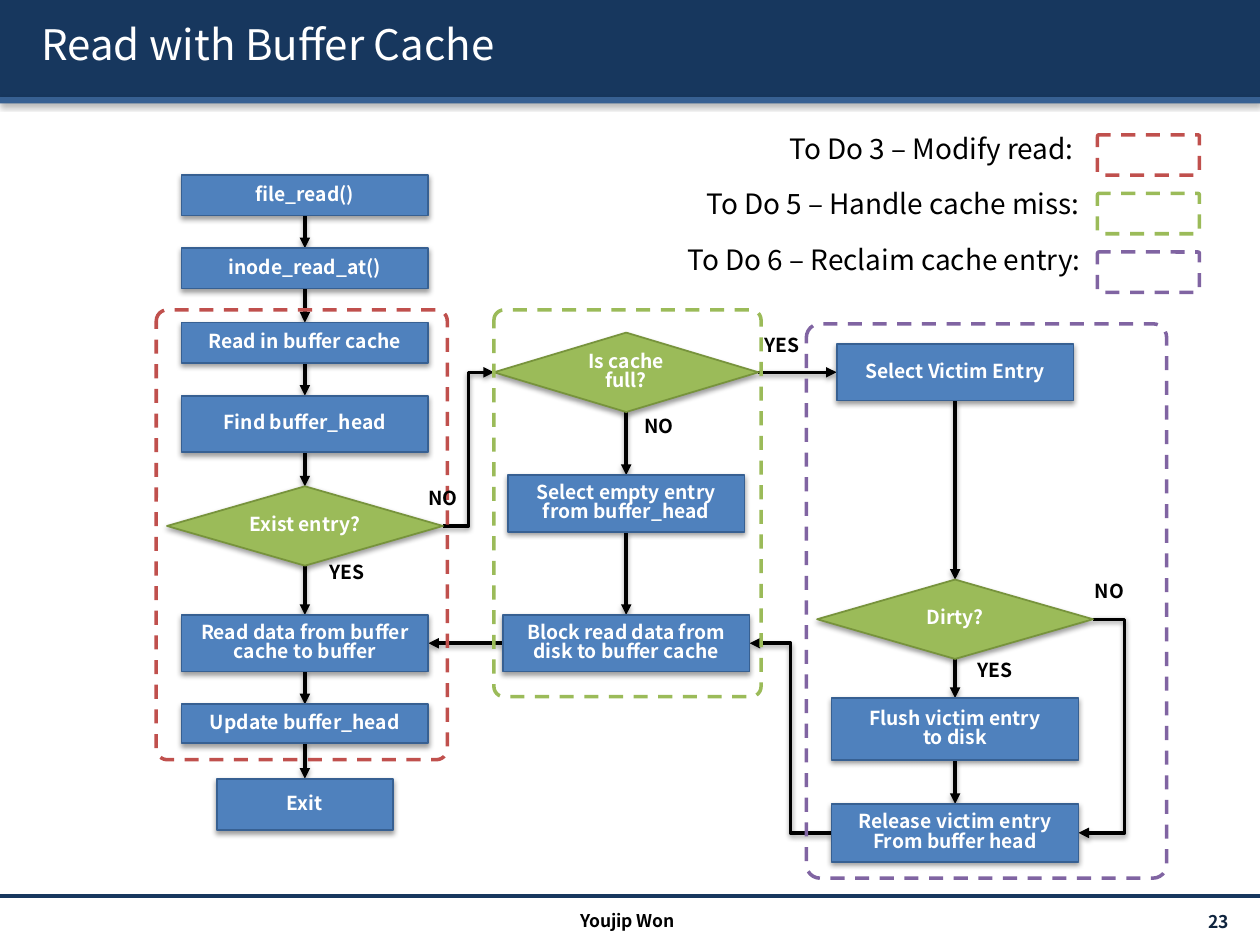
from dataclasses import dataclass
from itertools import pairwise

from lxml.etree import SubElement
from pptx import Presentation
from pptx.dml.color import RGBColor
from pptx.enum.dml import MSO_LINE
from pptx.enum.shapes import MSO_CONNECTOR, MSO_SHAPE
from pptx.enum.text import MSO_ANCHOR, PP_ALIGN
from pptx.oxml.ns import qn
from pptx.util import Inches, Pt

FONT = "Noto Sans CJK KR"
NAVY = RGBColor(0x17, 0x37, 0x5E)
DARK_NAVY = RGBColor(0x0F, 0x24, 0x3E)
STEEL = RGBColor(0x37, 0x60, 0x92)
BLUE = RGBColor(0x4F, 0x81, 0xBD)
GREEN = RGBColor(0x9B, 0xBB, 0x59)
DARK_GREEN = RGBColor(0x77, 0x93, 0x3C)
RED = RGBColor(0xC0, 0x50, 0x4D)
PURPLE = RGBColor(0x80, 0x64, 0xA2)
BLACK = RGBColor(0, 0, 0)
WHITE = RGBColor(0xFF, 0xFF, 0xFF)


@dataclass(frozen=True)
class Node:
    text: str
    center: float
    top: float
    height: float = 0.45
    width: float = 1.96
    decision: bool = False

    @property
    def left(self) -> float:
        return self.center - self.width / 2

    @property
    def right(self) -> float:
        return self.center + self.width / 2

    @property
    def middle(self) -> float:
        return self.top + self.height / 2

    @property
    def bottom(self) -> float:
        return self.top + self.height


@dataclass(frozen=True)
class Label:
    text: str
    left: float
    top: float
    width: float = 0.59
    height: float = 0.32
    size: int = 11
    bold: bool = True
    color: RGBColor = BLACK
    align: PP_ALIGN = PP_ALIGN.CENTER
    anchor: MSO_ANCHOR = MSO_ANCHOR.TOP


@dataclass(frozen=True)
class Task:
    text: str
    text_left: float
    color: RGBColor
    frame: tuple[float, float, float, float]


LEFT, CENTER, RIGHT = 2.42, 4.97, 7.58
EXISTS = Node("Exist entry?", LEFT, 3.86, 0.63, 2.19, True)
READ_DATA = Node("Read data from buffer cache to buffer", LEFT, 4.88)
FULL = Node("Is cache full?", CENTER, 2.64, 0.63, 2.1, True)
BLOCK_READ = Node("Block read data from disk to buffer cache", CENTER, 4.88)
VICTIM = Node("Select Victim Entry", RIGHT, 2.73, width=1.88)
DIRTY = Node("Dirty?", RIGHT, 4.6, 0.63, 2.19, True)
RELEASE = Node("Release victim entry\nFrom buffer head", RIGHT, 6.38, 0.46)
COLUMNS = (
    (
        Node("file_read()", LEFT, 1.39, 0.32),
        Node("inode_read_at()", LEFT, 1.97, 0.32),
        Node("Read in buffer cache", LEFT, 2.56, 0.32),
        Node("Find buffer_head", LEFT, 3.14),
        EXISTS,
        READ_DATA,
        Node("Update buffer_head", LEFT, 5.59, 0.31),
        Node("Exit", LEFT, 6.18, 0.41, 1.4),
    ),
    (FULL, Node("Select empty entry from buffer_head", CENTER, 3.77, width=1.88), BLOCK_READ),
    (VICTIM, DIRTY, Node("Flush victim entry\nto disk", RIGHT, 5.54, 0.49), RELEASE),
)
TASKS = (
    Task("To Do 3 – Modify read:", 6.17, RED, (1.24, 2.46, 2.31, 3.57)),
    Task("To Do 5 – Handle cache miss:", 5.51, GREEN, (3.92, 2.46, 2.12, 3.07)),
    Task("To Do 6 – Reclaim cache entry:", 5.36, PURPLE, (6.4, 2.57, 2.86, 4.4)),
)
LABELS = (
    Label("YES", 2.46, 4.43),
    Label("NO", 3.3, 3.84, 0.53, align=PP_ALIGN.LEFT),
    Label("NO", 4.95, 3.27, 0.56),
    Label("YES", 5.93, 2.63, 0.56),
    Label("YES", 7.6, 5.21),
    Label("NO", 8.51, 4.58),
    Label("Youjip Won", 3.32, 7.2, 3.32, 0.24, 10),
    Label("23", 8.71, 7.21, 1.14, 0.24, 10, True, DARK_NAVY, PP_ALIGN.RIGHT, MSO_ANCHOR.MIDDLE),
)


def add_shadow(effects, blur: float = 3.1, distance: float = 1.6, opacity: int = 38) -> None:
    """Fill an effect list with a soft black shadow falling straight down."""
    shadow = SubElement(effects, qn("a:outerShdw"), blurRad=str(Pt(blur)),
                        dist=str(Pt(distance)), dir="5400000", rotWithShape="0")
    color = SubElement(shadow, qn("a:srgbClr"), val="000000")
    SubElement(color, qn("a:alpha"), val=str(opacity * 1000))


def write_text(shape, text: str, size: int, color: RGBColor, bold: bool,
               align: PP_ALIGN, anchor: MSO_ANCHOR) -> None:
    """Put formatted text into a shape."""
    frame = shape.text_frame
    frame.text = text
    frame.word_wrap = True
    frame.vertical_anchor = anchor
    for para in frame.paragraphs:
        para.alignment = align
        para.line_spacing = 0.83
        for span in para.runs:
            span.font.name = FONT
            span.font.size = Pt(size)
            span.font.bold = bold
            span.font.color.rgb = color
            SubElement(span.font._element, qn("a:ea"), typeface=FONT)


def add_label(page, label: Label):
    """Add a text box and return it."""
    box = page.shapes.add_textbox(*map(Inches, (label.left, label.top, label.width, label.height)))
    write_text(box, label.text, label.size, label.color, label.bold, label.align, label.anchor)
    return box


def add_block(page, kind: MSO_SHAPE, place: tuple[float, ...], fill: RGBColor,
              line: RGBColor | None = None):
    """Add a filled shape with a shadow and return it."""
    shape = page.shapes.add_shape(kind, *map(Inches, place))
    shape.fill.solid()
    shape.fill.fore_color.rgb = fill
    if line is None:
        shape.line.fill.background()
    else:
        shape.line.color.rgb = line
        shape.line.width = Pt(1)
    shape.shadow.inherit = False
    add_shadow(shape.element.spPr.find(qn("a:effectLst")))
    return shape


def add_node(page, node: Node) -> None:
    """Draw one step or decision of the flow."""
    kind, fill, line = ((MSO_SHAPE.DIAMOND, GREEN, DARK_GREEN) if node.decision
                        else (MSO_SHAPE.RECTANGLE, BLUE, STEEL))
    shape = add_block(page, kind, (node.left, node.top, node.width, node.height), fill, line)
    write_text(shape, node.text, 11, WHITE, True, PP_ALIGN.CENTER, MSO_ANCHOR.MIDDLE)


def add_line(page, start: tuple[float, float], end: tuple[float, float], color: RGBColor = BLACK,
             arrow: bool = True, bend: float | None = None) -> None:
    """Draw a straight line, or an elbow whose bend is a share of its width."""
    kind = MSO_CONNECTOR.STRAIGHT if bend is None else MSO_CONNECTOR.ELBOW
    line = page.shapes.add_connector(kind, *map(Inches, (*start, *end)))
    line.line.color.rgb = color
    line.line.width = Pt(2)
    properties = line.element.spPr
    if bend is not None:
        guides = properties.find(qn("a:prstGeom")).get_or_add_avLst()
        SubElement(guides, qn("a:gd"), name="adj1", fmla=f"val {round(bend * 100000)}")
    effects = SubElement(properties, qn("a:effectLst"))
    if arrow:
        SubElement(properties.find(qn("a:ln")), qn("a:tailEnd"), type="triangle")
        add_shadow(effects)


def add_dashed_frame(page, place: tuple[float, ...], color: RGBColor) -> None:
    """Draw an unfilled dashed rounded frame."""
    frame = page.shapes.add_shape(MSO_SHAPE.ROUNDED_RECTANGLE, *map(Inches, place))
    frame.adjustments[0] = 0.038
    frame.fill.background()
    frame.line.color.rgb = color
    frame.line.width = Pt(2)
    frame.line.dash_style = MSO_LINE.DASH
    frame.shadow.inherit = False


def main() -> None:
    deck = Presentation()
    deck.slide_width, deck.slide_height = Inches(10), Inches(7.5)
    page = deck.slides.add_slide(deck.slide_layouts[6])
    add_block(page, MSO_SHAPE.RECTANGLE, (0, 0, 10, 0.77), NAVY)
    add_block(page, MSO_SHAPE.RECTANGLE, (0, 0.77, 10, 0.05), STEEL)
    add_line(page, (0, 7.11), (10, 7.11), NAVY, arrow=False)
    title = add_label(page, Label("Read with Buffer Cache", 0.23, 0.06, 9.61, 0.64, 24, False,
                                  WHITE, PP_ALIGN.LEFT, MSO_ANCHOR.MIDDLE))
    fill = title.text_frame.paragraphs[0].runs[0].font._element.find(qn("a:solidFill"))
    effects = SubElement(fill.getparent(), qn("a:effectLst"))
    fill.addnext(effects)
    add_shadow(effects, opacity=100)

    for column in COLUMNS:
        for upper, lower in pairwise(column):
            add_line(page, (upper.center, upper.bottom), (lower.center, lower.top))
    add_line(page, (BLOCK_READ.left, BLOCK_READ.middle), (READ_DATA.right, READ_DATA.middle))
    add_line(page, (FULL.right, VICTIM.middle), (VICTIM.left, VICTIM.middle))
    add_line(page, (EXISTS.right, EXISTS.middle), (FULL.left, FULL.middle), bend=0.5)
    add_line(page, (RELEASE.left, RELEASE.middle), (BLOCK_READ.right, BLOCK_READ.middle), bend=0.5)
    add_line(page, (DIRTY.right, DIRTY.middle), (RELEASE.right, RELEASE.middle), bend=-2.19)
    for column in COLUMNS:
        for node in column:
            add_node(page, node)
    for row, task in enumerate(TASKS):
        add_dashed_frame(page, task.frame, task.color)
        add_dashed_frame(page, (8.71, 1.07 + 0.465 * row, 0.81, 0.32), task.color)
        add_label(page, Label(task.text, task.text_left, 1.04 + 0.44 * row, 8.75 - task.text_left,
                              0.37, 16, False, align=PP_ALIGN.LEFT))
    for label in LABELS:
        add_label(page, label)
    deck.save("out.pptx")


if __name__ == "__main__":
    main()
